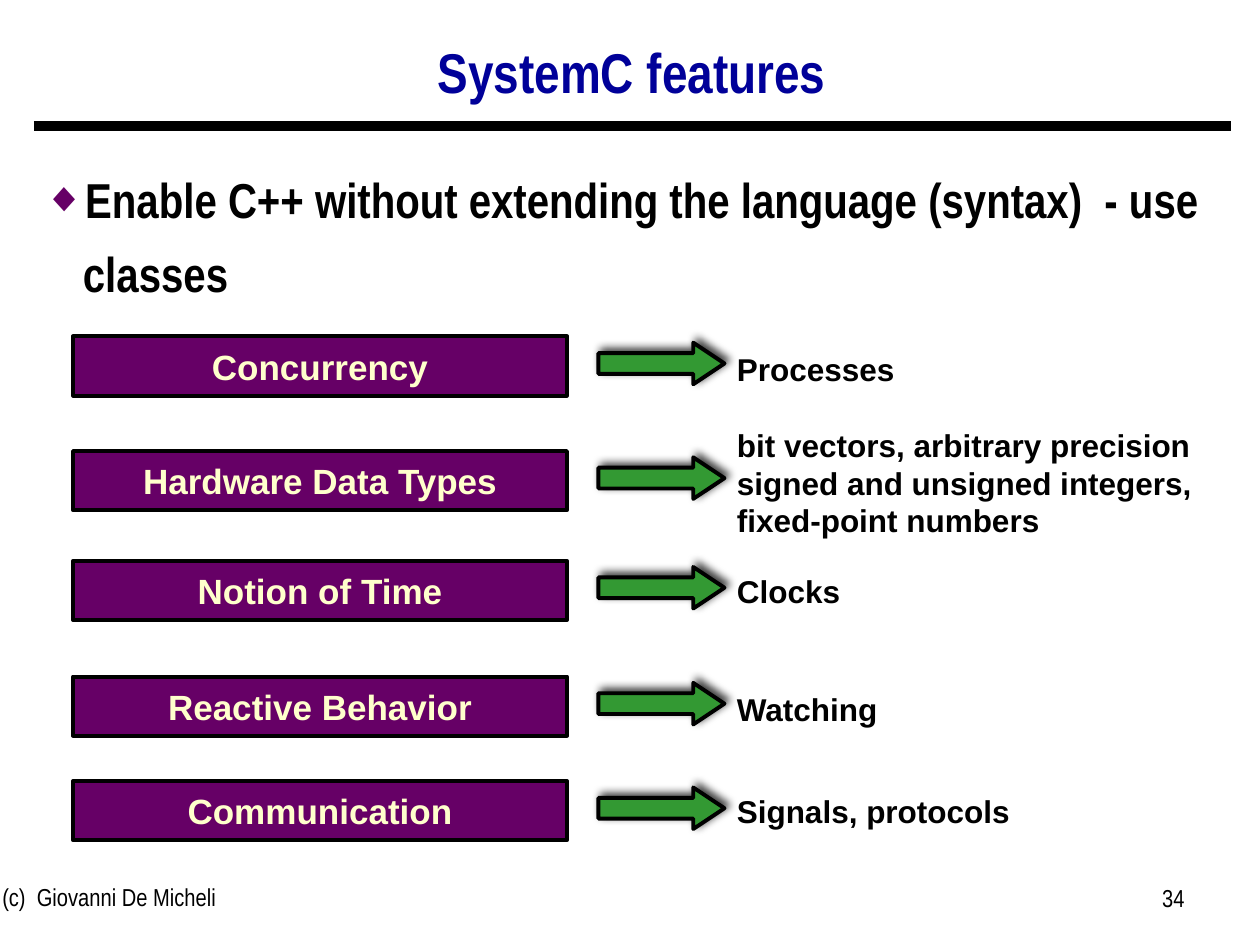
from dataclasses import dataclass

from lxml import etree
from pptx import Presentation
from pptx.dml.color import RGBColor
from pptx.enum.shapes import MSO_CONNECTOR, MSO_SHAPE
from pptx.enum.text import MSO_ANCHOR, MSO_AUTO_SIZE, PP_ALIGN
from pptx.oxml import parse_xml
from pptx.oxml.ns import nsdecls, qn
from pptx.util import Emu, Pt

RECT, ARROW = MSO_SHAPE.RECTANGLE, MSO_SHAPE.RIGHT_ARROW
STRAIGHT = MSO_CONNECTOR.STRAIGHT
LEFT, CENTER, RIGHT = PP_ALIGN.LEFT, PP_ALIGN.CENTER, PP_ALIGN.RIGHT
TOP, MIDDLE = MSO_ANCHOR.TOP, MSO_ANCHOR.MIDDLE
PX = 9144  # 100 px to the inch


@dataclass(frozen=True)
class Style:
    size: int
    font: str
    color: str
    bold: bool = True


@dataclass(frozen=True)
class Theme:
    black: str = "000000"
    purple: str = "660066"
    green: str = "339933"
    outline: float = 2.25
    rule: int = 6
    title: Style = Style(32, "Arial Narrow", "000099")
    body: Style = Style(28, "Arial Narrow", "000000")
    box: Style = Style(20, "Arial", "FFFFCC")
    label: Style = Style(18, "Arial", "000000")
    footer: Style = Style(14, "Arial Narrow", "000000", False)


@dataclass(frozen=True)
class Box:
    x: int
    y: int
    w: int
    h: int

    def emu(self) -> list[Emu]:
        return [Emu(v * PX) for v in (self.x, self.y, self.w, self.h)]


@dataclass(frozen=True)
class Feature:
    name: str
    top: int
    support: str
    label_top: int
    label_w: int
    label_h: int = 40


THEME = Theme()
FEATURES = [
    Feature("Concurrency", 267, "Processes", 273, 145),
    Feature("Hardware Data Types", 358,
            "bit vectors, arbitrary precision\nsigned and unsigned integers,\nfixed-point numbers",
            333, 392, 100),
    Feature("Notion of Time", 445, "Clocks", 449, 102),
    Feature("Reactive Behavior", 537, "Watching", 543, 133),
    Feature("Communication", 620, "Signals, protocols", 624, 237),
]


def write(sp, text: str, style: Style, align=LEFT, anchor=TOP, wrap=True):
    tf = sp.text_frame
    tf.text = text
    tf.word_wrap = wrap
    tf.auto_size = MSO_AUTO_SIZE.NONE
    tf.vertical_anchor = anchor
    for p in tf.paragraphs:
        p.alignment = align
        for r in p.runs:
            r.font.size = Pt(style.size)
            r.font.name = style.font
            r.font.bold = style.bold
            r.font.color.rgb = RGBColor.from_string(style.color)
    return tf


def add_text(slide, box: Box, text: str, style: Style, align=LEFT, wrap=True):
    return write(slide.shapes.add_textbox(*box.emu()), text, style, align, wrap=wrap)


def add_outlined(slide, kind, box: Box, fill: str):
    sp = slide.shapes.add_shape(kind, *box.emu())
    sp.shadow.inherit = False
    sp.fill.solid()
    sp.fill.fore_color.rgb = RGBColor.from_string(fill)
    sp.line.color.rgb = RGBColor.from_string(THEME.black)
    sp.line.width = Pt(THEME.outline)
    return sp


def add_arrow(slide, box: Box) -> None:
    """Draw a right arrow with a soft shadow to the upper right."""
    sp = add_outlined(slide, ARROW, box, THEME.green)
    sp.adjustments[0], sp.adjustments[1] = 0.5, 0.75
    effects = sp._element.spPr.find(qn("a:effectLst"))
    effects.append(parse_xml(
        f'<a:outerShdw {nsdecls("a")} blurRad="{Pt(5)}" dist="{Pt(2.9)}" '
        f'dir="{317 * 60000}" algn="ctr" rotWithShape="0">'
        f'<a:srgbClr val="{THEME.black}"><a:alpha val="75000"/></a:srgbClr></a:outerShdw>'))


def add_rule(slide, x1: int, x2: int, y: int) -> None:
    line = slide.shapes.add_connector(STRAIGHT, *(Emu(v * PX) for v in (x1, y, x2, y)))
    line.line.color.rgb = RGBColor.from_string(THEME.black)
    line.line.width = Pt(THEME.rule)
    etree.SubElement(line._element.spPr, qn("a:effectLst"))


def add_bullet(p, indent: int) -> None:
    """Give the paragraph a diamond bullet, a hanging indent and relative spacing."""
    p.line_spacing = 1.25
    pPr = p._p.get_or_add_pPr()
    pPr.set("marL", str(indent * PX))
    pPr.set("indent", str(-indent * PX))
    for xml in ('<a:spcBef {}><a:spcPct val="30000"/></a:spcBef>',
                '<a:buClr {}><a:srgbClr val="' + THEME.purple + '"/></a:buClr>',
                '<a:buSzPct {} val="85000"/>',
                '<a:buFont {} typeface="Arial"/>',
                '<a:buChar {} char="◆"/>'):
        pPr.append(parse_xml(xml.format(nsdecls("a"))))


def add_feature(slide, f: Feature) -> None:
    sp = add_outlined(slide, RECT, Box(58, f.top, 392, 47), THEME.purple)
    write(sp, f.name, THEME.box, CENTER, MIDDLE)
    add_text(slide, Box(575, f.label_top, f.label_w, f.label_h), f.support,
             THEME.label, wrap="\n" in f.support)
    add_arrow(slide, Box(475, f.top + 5, 100, 33))


def main() -> None:
    prs = Presentation()
    prs.slide_width, prs.slide_height = Emu(1000 * PX), Emu(750 * PX)
    slide = prs.slides.add_slide(prs.slide_layouts[5])

    title = slide.shapes.title
    title.left, title.top, title.width, title.height = Box(26, 22, 951, 75).emu()
    tf = write(title, "SystemC features", THEME.title, CENTER, MIDDLE)
    tf.paragraphs[0].line_spacing = 0.9

    add_rule(slide, 27, 977, 100)
    add_text(slide, Box(-8, 695, 317, 52), "(c)  Giovanni De Micheli", THEME.footer)
    add_text(slide, Box(717, 696, 233, 52), "34", THEME.footer, RIGHT)

    body = add_text(slide, Box(25, 118, 951, 569),
                    "Enable C++ without extending the language (syntax)  - use classes",
                    THEME.body)
    add_bullet(body.paragraphs[0], 31)

    for f in FEATURES:
        add_feature(slide, f)

    prs.save("out.pptx")


if __name__ == "__main__":
    main()
